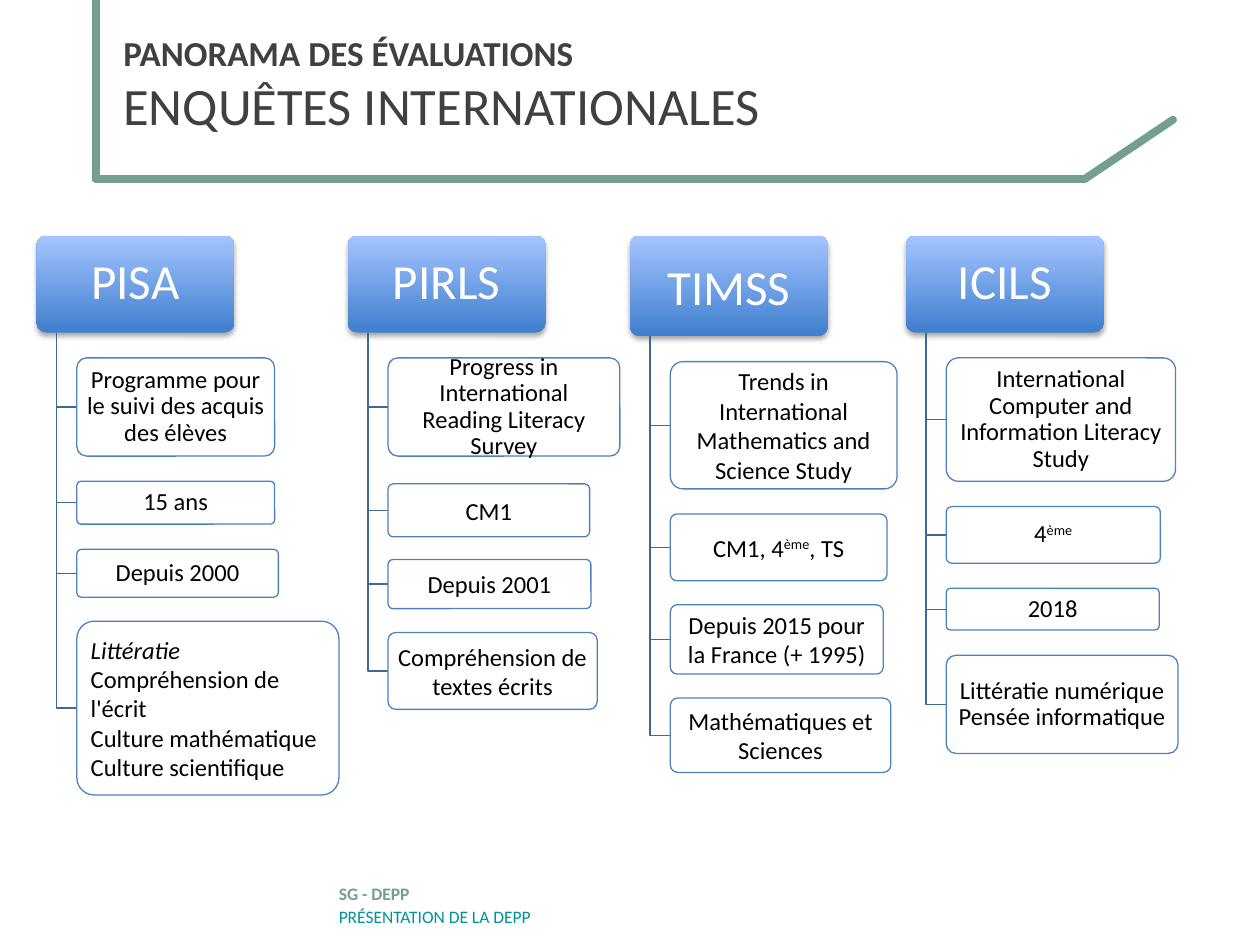
import pptx
import pptx.util
import pptx.dml.color
import pptx.enum.shapes
import pptx.enum.text
import pptx.oxml
import pptx.oxml.ns

Inches = pptx.util.Inches
Pt = pptx.util.Pt
RGBColor = pptx.dml.color.RGBColor
qn = pptx.oxml.ns.qn
PP_ALIGN = pptx.enum.text.PP_ALIGN
MIDDLE = pptx.enum.text.MSO_ANCHOR.MIDDLE
ROUNDED = pptx.enum.shapes.MSO_SHAPE.ROUNDED_RECTANGLE

GREEN = RGBColor(0x74, 0x9F, 0x90)
TEAL = RGBColor(0x00, 0x91, 0x9D)
DARK_GREY = RGBColor(0x40, 0x40, 0x40)
BLUE = RGBColor(0x3F, 0x7F, 0xCE)
LIGHT_BLUE = RGBColor(0xA4, 0xC4, 0xFF)
BORDER_BLUE = RGBColor(0x4F, 0x81, 0xBD)
STEM_BLUE = RGBColor(0x3F, 0x67, 0x97)
WHITE = RGBColor(0xFF, 0xFF, 0xFF)
BLACK = RGBColor(0, 0, 0)

NAMESPACE = 'xmlns:a="http://schemas.openxmlformats.org/drawingml/2006/main"'
SHADOW = (
    f'<a:outerShdw {NAMESPACE} blurRad="39370" dist="22860" dir="5400000" rotWithShape="0">'
    '<a:srgbClr val="000000"><a:alpha val="35000"/></a:srgbClr></a:outerShdw>'
)
STEP = 0.16
HEADER_TOP = 1.87
BOX_WIDTH = 1.57

presentation = pptx.Presentation()
presentation.slide_width = Inches(10)
presentation.slide_height = Inches(7.5)
slide = presentation.slides.add_slide(presentation.slide_layouts[6])


def add_run(paragraph, text, size, color, bold=False):
    run = paragraph.add_run()
    run.text = text
    run.font.name = "Calibri"
    run.font.size = Pt(size)
    run.font.color.rgb = color
    run.font.bold = bold
    return run


def add_box(left, top, width, height, margin_x, margin_y):
    box = slide.shapes.add_shape(
        ROUNDED, Inches(left), Inches(top), Inches(width), Inches(height)
    )
    box.adjustments[0] = 0.1
    box.shadow.inherit = False
    frame = box.text_frame
    frame.word_wrap = True
    frame.vertical_anchor = MIDDLE
    frame.margin_left = frame.margin_right = Inches(margin_x)
    frame.margin_top = frame.margin_bottom = Inches(margin_y)
    return box


frame_lines = [
    (0.76, 1.42, 8.61, 1.42),
    (8.61, 1.42, 9.31, 0.95),
    (0.76, 1.42, 0.76, 0),
]
for ends in frame_lines:
    connector = slide.shapes.add_connector(
        pptx.enum.shapes.MSO_CONNECTOR.STRAIGHT, *[Inches(value) for value in ends]
    )
    connector.line.color.rgb = GREEN
    connector.line.width = Pt(4.5)
    properties = connector._element.spPr
    properties.find(qn("a:ln")).set("cap", "rnd")
    properties.append(pptx.oxml.parse_xml(f"<a:effectLst {NAMESPACE}/>"))

text_blocks = [
    ((0.88, 0, 8.62, 1.33), 0.05, None,
     [("PANORAMA DES ÉVALUATIONS", 20, DARK_GREY, True),
      ("ENQUÊTES INTERNATIONALES", 30, DARK_GREY, False)]),
    ((2.59, 6.72, 5.05, 0.74), 0.22, Pt(13.2),
     [("SG - DEPP", 10, GREEN, True),
      ("PRÉSENTATION DE LA DEPP", 10, TEAL, False)]),
]
for position, margin_top, line_spacing, lines in text_blocks:
    text_box = slide.shapes.add_textbox(*[Inches(value) for value in position])
    frame = text_box.text_frame
    frame.word_wrap = True
    frame.vertical_anchor = MIDDLE
    frame.margin_top = Inches(margin_top)
    paragraph = frame.paragraphs[0]
    paragraph.line_spacing = line_spacing
    add_run(paragraph, *lines[0])
    paragraph.add_line_break()
    add_run(paragraph, *lines[1])

surveys = [
    ("PISA", 0.29, 0.77, 0.9, [
        (2.84, 1.57, 0.78, 0.9, [["Programme pour le suivi des acquis des élèves"]]),
        (3.82, 1.57, 0.34, 0.9, [["15 ans"]]),
        (4.36, 1.6, 0.38, 0.9, [["Depuis 2000"]]),
        (4.93, 2.08, 1.38, 1.0, [["Littératie", " Compréhension de l'écrit"],
                                 ["Culture mathématique Culture scientifique"]]),
    ]),
    ("PIRLS", 2.76, 0.77, 0.9, [
        (2.84, 1.84, 0.78, 0.9, [["Progress in International Reading Literacy Survey"]]),
        (3.84, 1.6, 0.42, 1.0, [["CM1"]]),
        (4.44, 1.61, 0.39, 1.0, [["Depuis 2001"]]),
        (5.02, 1.66, 0.61, 1.0, [["Compréhension de textes écrits"]]),
    ]),
    ("TIMSS", 5, 0.8, 1.0, [
        (2.87, 1.8, 1.01, 1.0, [["Trends in International Mathematics and Science Study"]]),
        (4.08, 1.72, 0.53, 1.0, [["CM1, 4", "ème", ", TS"]]),
        (4.8, 1.69, 0.55, 1.0, [["Depuis 2015 pour la France (+ 1995)"]]),
        (5.54, 1.75, 0.59, 1.0, [["Mathématiques et Sciences"]]),
    ]),
    ("ICILS", 7.19, 0.77, 0.9, [
        (2.84, 1.82, 0.98, 0.9, [["International Computer and Information Literacy Study"]]),
        (4.02, 1.7, 0.45, 0.9, [["4", "ème"]]),
        (4.67, 1.69, 0.33, 0.9, [["2018"]]),
        (5.2, 1.84, 0.78, 0.9, [["Littératie numérique Pensée informatique"]]),
    ]),
]

for name, left, header_height, header_spacing, details in surveys:
    header = add_box(left, HEADER_TOP, BOX_WIDTH, header_height, 0.08, 0.06)
    header.fill.gradient()
    header.fill.gradient_angle = 90
    for stop, color in zip(header.fill.gradient_stops, (BLUE, LIGHT_BLUE)):
        stop.color.rgb = color
    header.line.fill.background()
    header._element.spPr.find(qn("a:effectLst")).append(pptx.oxml.parse_xml(SHADOW))
    paragraph = header.text_frame.paragraphs[0]
    paragraph.alignment = PP_ALIGN.CENTER
    paragraph.line_spacing = header_spacing
    add_run(paragraph, name, 28, WHITE)

    stem_left = left + STEP
    box_left = stem_left + STEP
    for top, width, height, spacing, paragraphs in details:
        middle = top + height / 2
        builder = slide.shapes.build_freeform(
            Inches(stem_left), Inches(HEADER_TOP + header_height)
        )
        builder.add_line_segments(
            [(Inches(stem_left), Inches(middle)), (Inches(box_left), Inches(middle))],
            close=False,
        )
        branch = builder.convert_to_shape()
        branch.shadow.inherit = False
        branch.fill.background()
        branch.line.color.rgb = STEM_BLUE
        branch.line.width = Pt(0.75)

        is_list = len(paragraphs) > 1
        box = add_box(box_left, top, width, height, 0.07 if is_list else 0.05, 0.04)
        box.fill.solid()
        box.fill.fore_color.rgb = WHITE
        white = box._element.spPr.find(qn("a:solidFill")).find(qn("a:srgbClr"))
        white.append(pptx.oxml.parse_xml(f'<a:alpha {NAMESPACE} val="90000"/>'))
        box.line.color.rgb = BORDER_BLUE
        box.line.width = Pt(0.75)
        frame = box.text_frame
        for index, texts in enumerate(paragraphs):
            paragraph = frame.add_paragraph() if index else frame.paragraphs[0]
            paragraph.alignment = PP_ALIGN.LEFT if is_list else PP_ALIGN.CENTER
            paragraph.line_spacing = spacing
            for text in texts:
                run = add_run(paragraph, text, 14, BLACK)
                if text == "ème":
                    run.font._element.set("baseline", "30000")
                if text == "Littératie":
                    run.font.italic = True

presentation.save("out.pptx")
